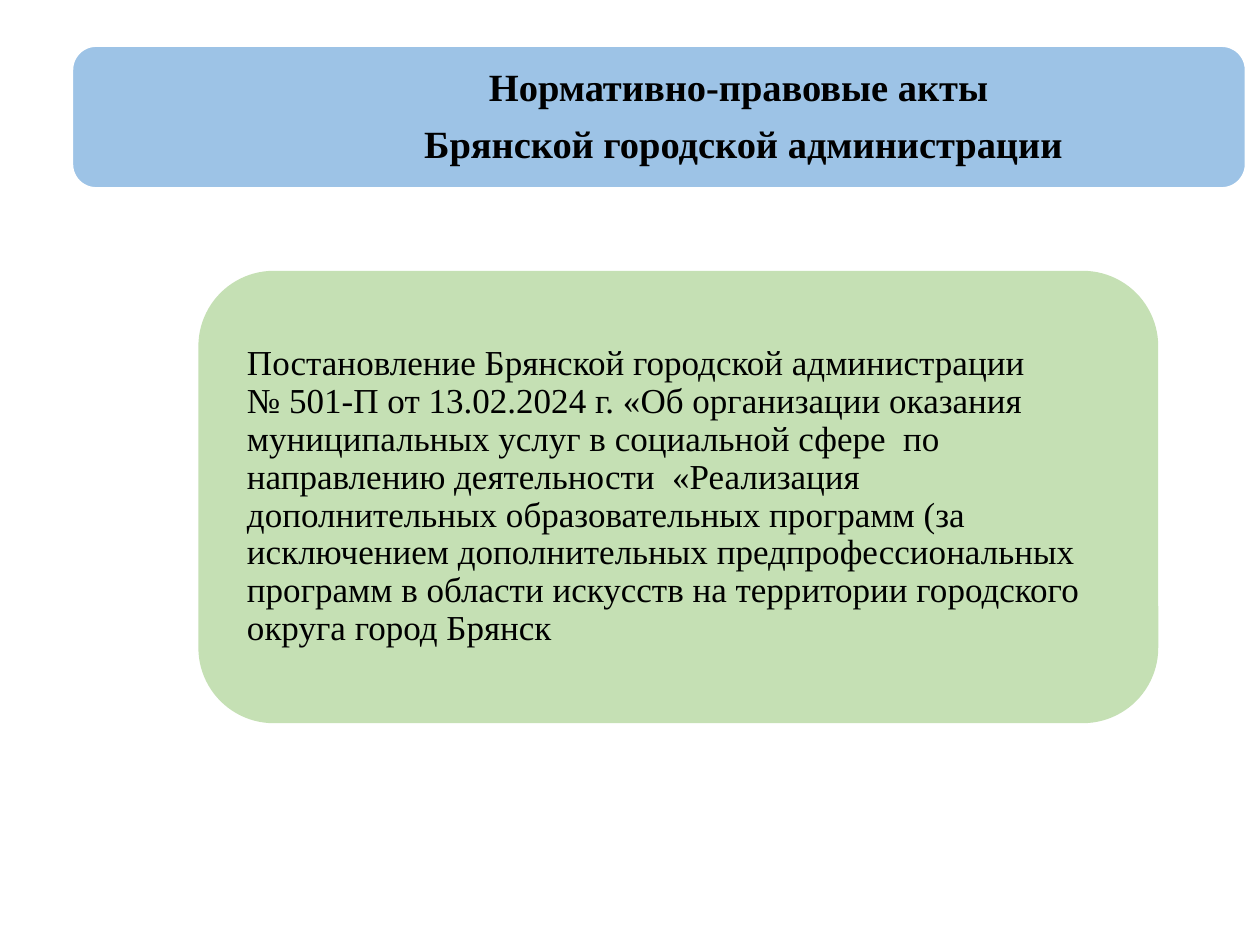
from pptx import Presentation
from pptx.dml.color import RGBColor
from pptx.enum.shapes import MSO_SHAPE as SHAPE
from pptx.enum.text import MSO_ANCHOR as ANCHOR, PP_ALIGN as ALIGN
from pptx.util import Cm, Pt

BLACK = RGBColor(0x00, 0x00, 0x00)
WHITE = RGBColor(0xFF, 0xFF, 0xFF)
BLUE = RGBColor(0x9D, 0xC3, 0xE6)
GREEN = RGBColor(0xC5, 0xE0, 0xB4)

TITLE = ["Нормативно-правовые акты ", "Брянской городской администрации"]
DECREE = [
    "Постановление Брянской городской администрации\v"
    "№ 501-П от 13.02.2024 г. «Об организации оказания муниципальных услуг "
    "в социальной сфере  по направлению деятельности  «Реализация "
    "дополнительных образовательных программ (за исключением дополнительных "
    "предпрофессиональных программ в области искусств на территории "
    "городского округа город Брянск"
]


class SlideBuilder:
    """Draws panels and text in one style on the current slide."""

    font = "Times New Roman"

    def __init__(self, slide):
        self.s = slide

    def panel(self, left, top, width, height, fill, line=None):
        sp = self.s.shapes.add_shape(
            SHAPE.ROUNDED_RECTANGLE, Cm(left), Cm(top), Cm(width), Cm(height))
        sp.shadow.inherit = False
        sp.fill.solid()
        sp.fill.fore_color.rgb = fill
        if line is None:
            sp.line.fill.background()
        else:
            sp.line.color.rgb = line
            sp.line.width = Pt(1)

    def text(self, left, top, width, height, lines, size,
             bold=False, align=ALIGN.LEFT, inset=(0, 0)):
        tf = self.s.shapes.add_textbox(
            Cm(left), Cm(top), Cm(width), Cm(height)).text_frame
        tf.word_wrap = True
        tf.vertical_anchor = ANCHOR.MIDDLE
        tf.margin_left = tf.margin_right = Cm(inset[0])
        tf.margin_top = tf.margin_bottom = Cm(inset[1])
        for i, line in enumerate(lines):
            p = tf.add_paragraph() if i else tf.paragraphs[0]
            p.text = line
            p.alignment = align
            p.line_spacing = 0.9
            p.space_after = Pt(size * 0.4)
            p.font.name = self.font
            p.font.size = Pt(size)
            p.font.bold = bold
            p.font.color.rgb = BLACK


def main():
    prs = Presentation()
    prs.slide_width, prs.slide_height = Cm(25.4), Cm(19.05)
    b = SlideBuilder(prs.slides.add_slide(prs.slide_layouts[6]))
    b.panel(4, 5.46, 19.35, 9.12, GREEN)
    b.text(4.45, 5.9, 18.46, 8.23, DECREE, 20, inset=(0.53, 0))
    b.panel(1.46, 0.93, 23.65, 2.86, BLUE, WHITE)
    b.text(3.15, -0.08, 23.67, 4.9, TITLE, 22, bold=True,
           align=ALIGN.CENTER, inset=(0.23, 0.23))
    prs.save("out.pptx")


if __name__ == "__main__":
    main()
